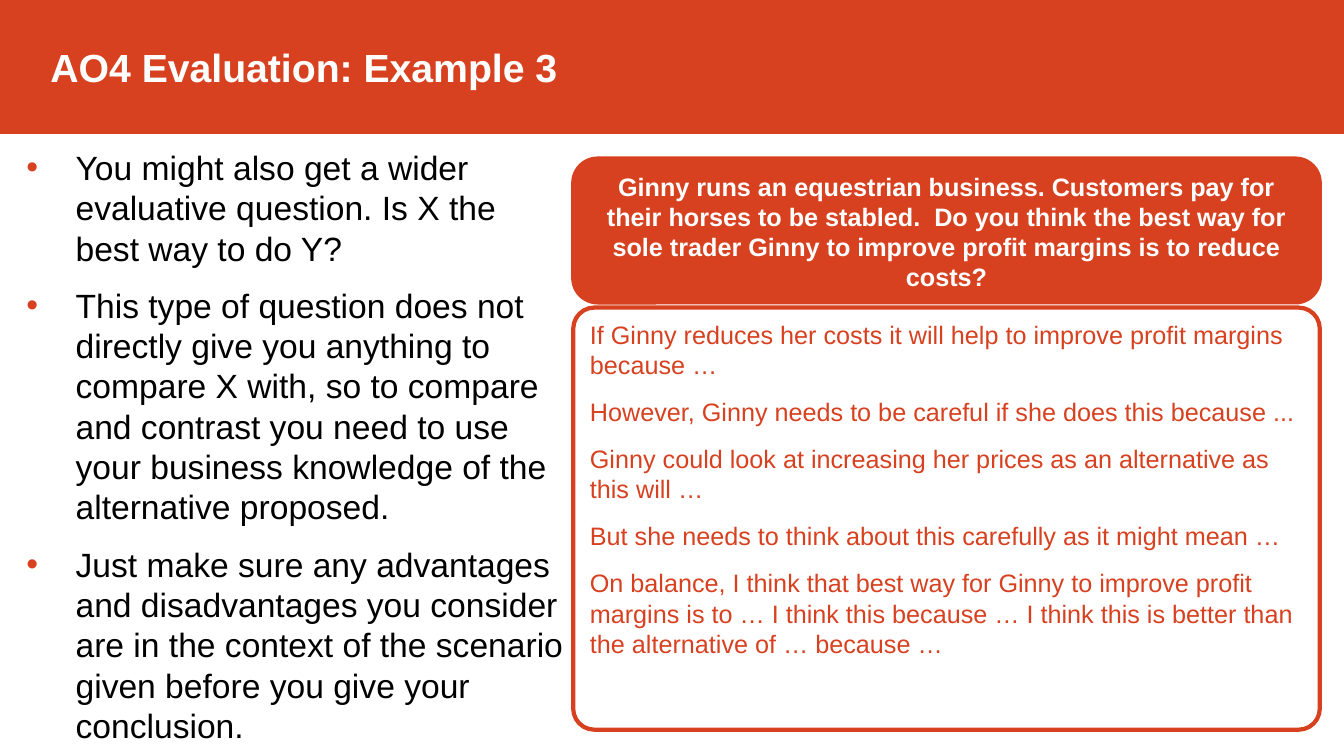
from lxml import etree
from pptx import Presentation
from pptx.dml.color import RGBColor
from pptx.enum.shapes import MSO_SHAPE
from pptx.enum.text import MSO_ANCHOR, MSO_AUTO_SIZE, PP_ALIGN
from pptx.oxml.ns import qn
from pptx.util import Pt

PX = 9525  # EMU per px, at 96 px to the inch
ROUNDED = MSO_SHAPE.ROUNDED_RECTANGLE
LEFT, CENTER = PP_ALIGN.LEFT, PP_ALIGN.CENTER
TOP, MIDDLE = MSO_ANCHOR.TOP, MSO_ANCHOR.MIDDLE
NO_FIT = MSO_AUTO_SIZE.NONE

RED, WHITE, BLACK = "D74120", "FFFFFF", "000000"

TITLE = "AO4 Evaluation: Example 3"
ADVICE = [
    "You might also get a wider evaluative question. Is X the best way to do Y?",
    "This type of question does not directly give you anything to compare X with, "
    "so to compare and contrast you need to use your business knowledge of the "
    "alternative proposed.",
    "Just make sure any advantages and disadvantages you consider are in the "
    "context of the scenario given before you give your conclusion.",
]
QUESTION = (
    "Ginny runs an equestrian business. Customers pay for their horses to be "
    "stabled.  Do you think the best way for sole trader Ginny to improve profit "
    "margins is to reduce costs?"
)
ANSWER = [
    "If Ginny reduces her costs it will help to improve profit margins because …",
    "However, Ginny needs to be careful if she does this because ...",
    "Ginny could look at increasing her prices as an alternative as this will …",
    "But she needs to think about this carefully as it might mean …",
    "On balance, I think that best way for Ginny to improve profit margins is to … "
    "I think this because … I think this is better than the alternative of … "
    "because …",
]


def color(value):
    return RGBColor.from_string(value)


def place(shape, box):
    for name, length in zip(("left", "top", "width", "height"), box):
        setattr(shape, name, length * PX)


def paint(shape, fill, line, width):
    if fill:
        shape.fill.solid()
        shape.fill.fore_color.rgb = color(fill)
    else:
        shape.fill.background()
    shape.line.color.rgb = color(line)
    shape.line.width = Pt(width)


def write(shape, texts, size, ink, bold=False, anchor=TOP, **para_format):
    """Fill a shape with one formatted paragraph per text."""
    frame = shape.text_frame
    frame_format = {
        "word_wrap": True, "auto_size": NO_FIT, "vertical_anchor": anchor,
        "margin_left": 10 * PX, "margin_right": 10 * PX,
        "margin_top": 5 * PX, "margin_bottom": 5 * PX,
    }
    for name, value in frame_format.items():
        setattr(frame, name, value)
    values = {"alignment": LEFT, "space_before": Pt(0), **para_format}
    for index, text in enumerate(texts):
        para = frame.paragraphs[0] if index == 0 else frame.add_paragraph()
        for name, value in values.items():
            setattr(para, name, value)
        span = para.add_run()
        span.text = text
        font = {"name": "Arial", "size": Pt(size), "bold": bold}
        for name, value in font.items():
            setattr(span.font, name, value)
        span.font.color.rgb = color(ink)


def indent(para, left, first):
    props = para._p.get_or_add_pPr()
    props.set("marL", str(left * PX))
    props.set("indent", str(first * PX))
    return props


def add_bullet(para, hang, tint):
    props = indent(para, hang, -hang)
    bullet_color = etree.SubElement(props, qn("a:buClr"))
    etree.SubElement(bullet_color, qn("a:srgbClr"), val=tint)
    etree.SubElement(props, qn("a:buFont"), typeface="Arial")
    etree.SubElement(props, qn("a:buChar"), char="•")


def build_banner(page, box):
    banner = page.shapes.title
    place(banner, box)
    paint(banner, RED, RED, 1)
    write(banner, [TITLE], 28, WHITE, bold=True, anchor=MIDDLE)
    indent(banner.text_frame.paragraphs[0], 38, 0)


def build_advice(page, box):
    advice = page.placeholders[1]
    place(advice, box)
    write(advice, ADVICE, 24, BLACK, level=1, space_after=Pt(12))
    advice.text_frame.margin_right = 5 * PX
    for para in advice.text_frame.paragraphs:
        add_bullet(para, 47, RED)


def add_panel(page, box, corner, fill):
    panel = page.shapes.add_shape(ROUNDED, *(length * PX for length in box))
    panel.shadow.inherit = False
    panel.adjustments[0] = corner
    paint(panel, fill, RED, 3)
    return panel


def build_example(page, box):
    """Question panel above, model answer panel below."""
    left, top, width, height = box
    question_height, gap = 137, 5
    offset = question_height + gap
    question = add_panel(page, (left, top, width, question_height), 0.17, RED)
    write(question, [QUESTION], 18, WHITE, bold=True, alignment=CENTER,
          space_before=Pt(6), space_after=Pt(6))
    answer = add_panel(page, (left, top + offset, width, height - offset), 0.05, None)
    write(answer, ANSWER, 18, RED, level=1, space_after=Pt(12))
    for para in answer.text_frame.paragraphs:
        indent(para, 0, 0)


def main():
    deck = Presentation()
    deck.slide_width, deck.slide_height = 1280 * PX, 720 * PX
    page = deck.slides.add_slide(deck.slide_layouts[1])
    build_banner(page, (0, 0, 1280, 127))
    build_advice(page, (15, 135, 531, 585))
    build_example(page, (546, 151, 711, 544))
    deck.save("out.pptx")


if __name__ == "__main__":
    main()
